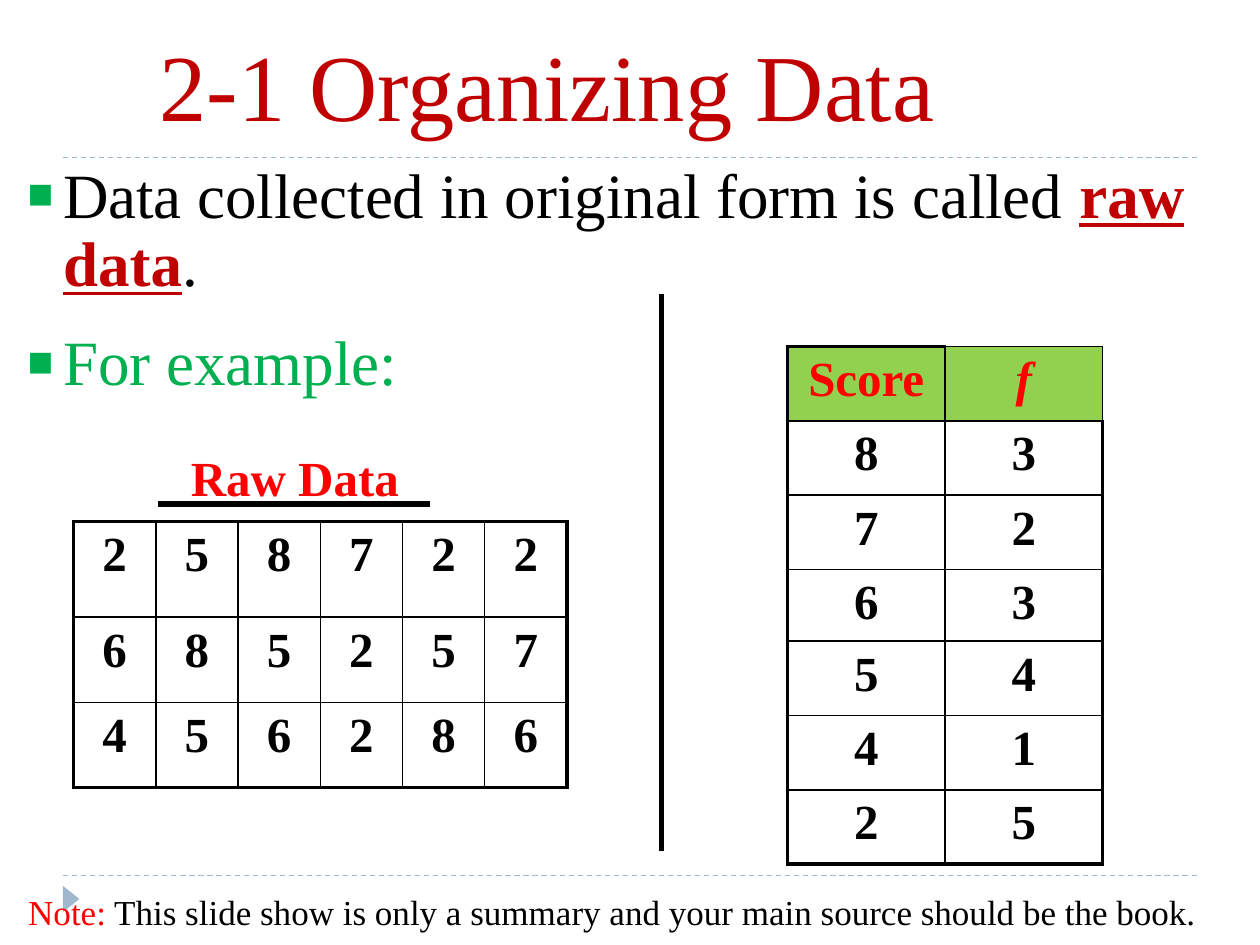
from collections import namedtuple

from lxml.etree import SubElement
from pptx import Presentation
from pptx.dml.color import RGBColor
from pptx.enum.dml import MSO_LINE
from pptx.enum.shapes import MSO_CONNECTOR as CONNECTOR, MSO_SHAPE as SHAPE
from pptx.enum.text import MSO_ANCHOR as ANCHOR, MSO_AUTO_SIZE as AUTO_SIZE, PP_ALIGN as ALIGN
from pptx.oxml.ns import qn
from pptx.util import Pt

BLACK = RGBColor(0x00, 0x00, 0x00)
RED = RGBColor(0xFF, 0x00, 0x00)
DARK_RED = RGBColor(0xC0, 0x00, 0x00)
GREEN = RGBColor(0x00, 0xB0, 0x50)
LIME = RGBColor(0x92, 0xD0, 0x50)
STEEL = RGBColor(0x9F, 0xB8, 0xCD)
FONT = "Times New Roman"
THIN, THICK = 1, 2.25

Box = namedtuple("Box", "left top width height")

RAW_DATA = ["258722", "685257", "456286"]
FREQUENCIES = [["Score", "f"], "83", "72", "63", "54", "41", "25"]


def points(*values):
    """Convert numbers to lengths in points."""
    return [Pt(value) for value in values]


def add_run(paragraph, text, size, color, bold=False, italic=False, underline=False):
    """Add one formatted run to a paragraph."""
    run = paragraph.add_run()
    run.text = text
    font = run.font
    font.name, font.size, font.color.rgb = FONT, Pt(size), color
    font.bold, font.italic, font.underline = bold, italic, underline


def add_line(shapes, start, end, color, width, dash=None):
    """Draw a straight line without a shadow."""
    line = shapes.add_connector(CONNECTOR.STRAIGHT, *points(*start, *end))
    line.line.color.rgb, line.line.width = color, Pt(width)
    if dash:
        line.line.dash_style = dash
    SubElement(line._element.spPr, qn("a:effectLst"))


def add_text(shapes, box):
    """Add a wrapping text box and return its first paragraph."""
    frame = shapes.add_textbox(*points(*box)).text_frame
    frame.word_wrap = True
    return frame.paragraphs[0]


def place(placeholder, box):
    """Move a placeholder to a box and return its text frame."""
    placeholder.left, placeholder.top, placeholder.width, placeholder.height = points(*box)
    frame = placeholder.text_frame
    frame.word_wrap, frame.auto_size = True, AUTO_SIZE.NONE
    return frame


def add_bullet(paragraph):
    """Give a paragraph a green square bullet with a hanging indent."""
    properties = paragraph._p.get_or_add_pPr()
    properties.set("marL", str(Pt(28.8)))
    properties.set("indent", str(Pt(-20.16)))
    color = SubElement(properties, qn("a:buClr"))
    SubElement(color, qn("a:srgbClr"), val=str(GREEN))
    SubElement(properties, qn("a:buSzPct"), val="68000")
    SubElement(properties, qn("a:buFont"), typeface=FONT)
    SubElement(properties, qn("a:buChar"), char="■")


def add_frame(slide, box):
    """Draw the dashed rules and the corner marker."""
    right = box.left + box.width
    for y in (box.top, box.top + box.height):
        add_line(slide.shapes, (box.left, y), (right, y), STEEL, 0.75, MSO_LINE.DASH)
    marker = slide.shapes.add_shape(
        SHAPE.ISOSCELES_TRIANGLE, *points(box.left - 2.9, box.top + box.height + 8.6, 15.1, 9.4))
    marker.rotation = 90
    marker.shadow.inherit = False
    marker.fill.solid()
    marker.fill.fore_color.rgb = STEEL
    marker.line.fill.background()


def add_title(slide, box):
    """Fill the title placeholder."""
    frame = place(slide.shapes.title, box)
    frame.vertical_anchor = ANCHOR.BOTTOM
    paragraph = frame.paragraphs[0]
    paragraph.alignment = ALIGN.LEFT
    add_run(paragraph, "2-1 Organizing Data", 54, DARK_RED)


def add_body(slide, box):
    """Fill the body placeholder with two bulleted paragraphs."""
    frame = place(slide.placeholders[1], box)
    definition, example = frame.paragraphs[0], frame.add_paragraph()
    for paragraph, space in ((definition, 0), (example, 18)):
        paragraph.line_spacing, paragraph.space_before = 0.9, Pt(space)
        add_bullet(paragraph)
    add_run(definition, "Data collected in original form is called ", 36, BLACK)
    add_run(definition, "raw data", 36, DARK_RED, bold=True, underline=True)
    add_run(definition, ".", 36, BLACK)
    add_run(example, "For example:", 36, GREEN)


def set_borders(cell, widths):
    """Set black cell borders, given as left, right, top and bottom widths."""
    properties = cell._tc.get_or_add_tcPr()
    for index, (side, width) in enumerate(zip("LRTB", widths)):
        line = properties.makeelement(qn(f"a:ln{side}"), {"w": str(Pt(width))})
        fill = SubElement(line, qn("a:solidFill"))
        SubElement(fill, qn("a:srgbClr"), val=str(BLACK))
        properties.insert(index, line)


def add_grid(slide, box, rows, row_heights, header=False):
    """Add a table of centred bold values with a thick outline."""
    last_row, last_column = len(rows) - 1, len(rows[0]) - 1
    table = slide.shapes.add_table(len(rows), len(rows[0]), *points(*box)).table
    table.first_row = table.horz_banding = False
    for column in table.columns:
        column.width = Pt(box.width / len(rows[0]))
    for r, values in enumerate(rows):
        table.rows[r].height = Pt(row_heights[r])
        is_header = header and r == 0
        for c, value in enumerate(values):
            cell = table.cell(r, c)
            if is_header:
                cell.fill.solid()
                cell.fill.fore_color.rgb = LIME
            else:
                cell.fill.background()
            thin_corner = is_header and c == last_column
            outer = (c == 0, c == last_column, r == 0, r == last_row)
            set_borders(cell, [THICK if edge and not thin_corner else THIN for edge in outer])
            paragraph = cell.text_frame.paragraphs[0]
            paragraph.alignment = ALIGN.CENTER
            add_run(paragraph, value, 28, RED if is_header else BLACK,
                    bold=True, italic=value == "f")


def add_caption(slide, box):
    """Group the raw data caption with its underline."""
    shapes = slide.shapes.add_group_shape().shapes
    paragraph = add_text(shapes, Box(box.left + 12, box.top, 144, box.height))
    paragraph.space_before = Pt(3)
    add_run(paragraph, "Raw Data", 28, RED, bold=True)
    y = box.top + 36
    add_line(shapes, (box.left, y), (box.left + box.width, y), BLACK, 3)


def add_note(slide, box):
    """Add the note at the foot of the slide."""
    paragraph = add_text(slide.shapes, box)
    add_run(paragraph, "Note:", 20, RED)
    add_run(paragraph, " This slide show is only a summary and your main source should be the book.",
            20, BLACK)


def main():
    """Build the slide and save it."""
    presentation = Presentation()
    presentation.slide_width, presentation.slide_height = points(720, 540)
    slide = presentation.slides.add_slide(presentation.slide_layouts[1])
    add_frame(slide, Box(36, 90, 648, 410.4))
    add_title(slide, Box(84, -6, 564, 90))
    add_body(slide, Box(0, 90, 702, 336))
    add_line(slide.shapes, (378, 168), (378, 486), BLACK, 3)
    add_grid(slide, Box(42, 298, 282, 152), RAW_DATA, [54.6, 48.7, 48.7])
    add_caption(slide, Box(90, 252, 156, 41))
    add_grid(slide, Box(450, 198, 180, 295.5), FREQUENCIES,
             [42.5, 42.5, 42.5, 40.5, 42.5, 42.5, 42.5], header=True)
    add_note(slide, Box(9, 505.5, 702, 31.5))
    presentation.save("out.pptx")


if __name__ == "__main__":
    main()
